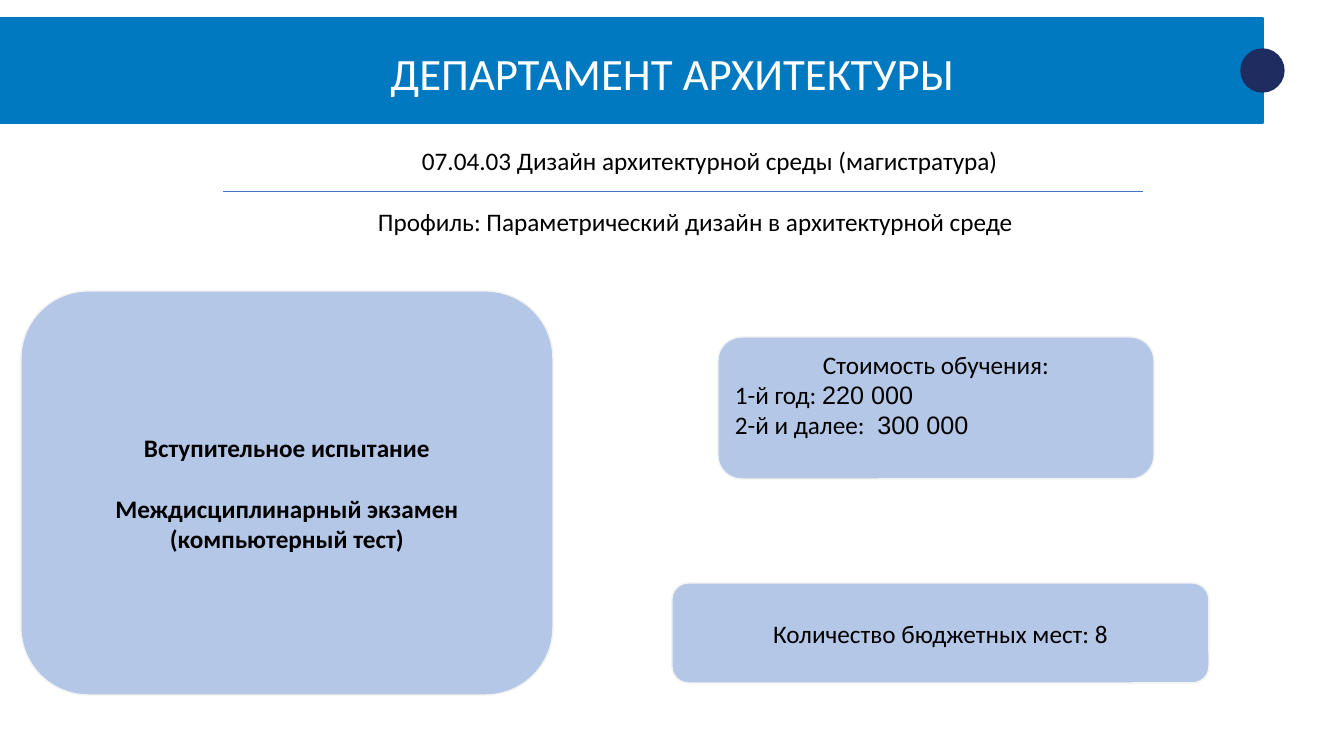
from pptx import Presentation
from pptx import util as u
from pptx.dml.color import RGBColor
from pptx.enum import shapes, text
from pptx.oxml.ns import qn
from lxml import etree

PX = 914400 / 100.8
BLUE, NAVY, PALE, EDGE = "0079C1", "1F2C60", "B4C7E7", "F2F2F2"
KIND = shapes.MSO_SHAPE
MID, TOP = text.MSO_ANCHOR.MIDDLE, text.MSO_ANCHOR.TOP
LEFT, CENTER = text.PP_ALIGN.LEFT, text.PP_ALIGN.CENTER

# Each line of text is a list of (words, font) runs.
TITLE = [[("ДЕПАРТАМЕНТ АРХИТЕКТУРЫ", "Calibri")]]
COURSE = [[("07.04.03 Дизайн архитектурной среды (магистратура)", "Calibri")]]
PROFILE = [[("Профиль: Параметрический дизайн в архитектурной среде", "Calibri")]]
EXAM = [
    [("Вступительное испытание", "Calibri")],
    [("Междисциплинарный экзамен", "Calibri")],
    [("(компьютерный тест)", "Calibri")],
]
PLACES = [[("Количество бюджетных мест: 8", "Calibri")]]
COST = [
    [("Стоимость обучения:", "Calibri")],
    [("1-й год: ", "Calibri"), ("220 000", "Arial")],
    [("2-й и далее: ", "Calibri"), ("\u00a0300 000".replace("\u00a0", " "), "Arial")],
]

# kind, place in px, fill, edge
BAND = (KIND.RECTANGLE, (0, 18, 1263, 105), BLUE, BLUE)
DOT = (KIND.OVAL, (1241, 49, 43, 43), NAVY, NAVY)
CARDS = [
    ((21, 291, 532, 404), EXAM, dict(bold=True, first_gap=22)),
    ((672, 583, 537, 100), PLACES, {}),
    ((718, 337, 436, 142), COST, dict(anchor=TOP, aligns=[CENTER, LEFT, LEFT])),
]
LABELS = [
    ((93, 3, 1159, 146), TITLE, dict(size=32, color="FFFFFF", spacing=0.9)),
    ((412, 144, 700, 37), COURSE, dict(anchor=TOP, aligns=[LEFT], spacing=0.9)),
    ((368, 205, 900, 37), PROFILE, dict(anchor=TOP, aligns=[LEFT], spacing=0.9)),
]
RULE = (223, 191, 1143, 191)


def emu(place):
    return [round(n * PX) for n in place]


def tint(code):
    return RGBColor.from_string(code)


def write(shape, lines, size=18, color="000000", bold=False, anchor=MID,
          aligns=None, spacing=None, first_gap=0):
    """Fill a shape with lines; first_gap is the space after the first, in points."""
    frame = shape.text_frame
    frame.word_wrap = True
    frame.vertical_anchor = anchor
    aligns = aligns or [CENTER] * len(lines)
    for i, (runs, align) in enumerate(zip(lines, aligns)):
        para = frame.add_paragraph() if i else frame.paragraphs[0]
        para.alignment = align
        para.line_spacing = spacing
        if i == 0 and first_gap:
            para.space_after = u.Pt(first_gap)
        for words, face in runs:
            run = para.add_run()
            run.text = words
            run.font.name = face
            run.font.size = u.Pt(size)
            run.font.bold = bold
            run.font.color.rgb = tint(color)


def draw(slide, kind, place, fill, edge):
    shape = slide.shapes.add_shape(kind, *emu(place))
    shape.shadow.inherit = False
    shape.fill.solid()
    shape.fill.fore_color.rgb = tint(fill)
    shape.line.color.rgb = tint(edge)
    shape.line.width = u.Pt(1)
    return shape


def main():
    deck = Presentation()
    deck.slide_width, deck.slide_height = emu((1344, 756))
    slide = deck.slides.add_slide(deck.slide_layouts[6])

    draw(slide, *BAND)
    for place, lines, style in LABELS:
        write(slide.shapes.add_textbox(*emu(place)), lines, **style)

    rule = slide.shapes.add_connector(shapes.MSO_CONNECTOR.STRAIGHT, *emu(RULE))
    rule.line.color.rgb = tint("4472C4")
    rule.line.width = u.Pt(0.5)
    etree.SubElement(rule._element.spPr, qn("a:effectLst"))

    for place, lines, style in CARDS:
        card = draw(slide, KIND.ROUNDED_RECTANGLE, place, PALE, EDGE)
        write(card, lines, **style)
    draw(slide, *DOT)

    deck.save("out.pptx")


if __name__ == "__main__":
    main()
